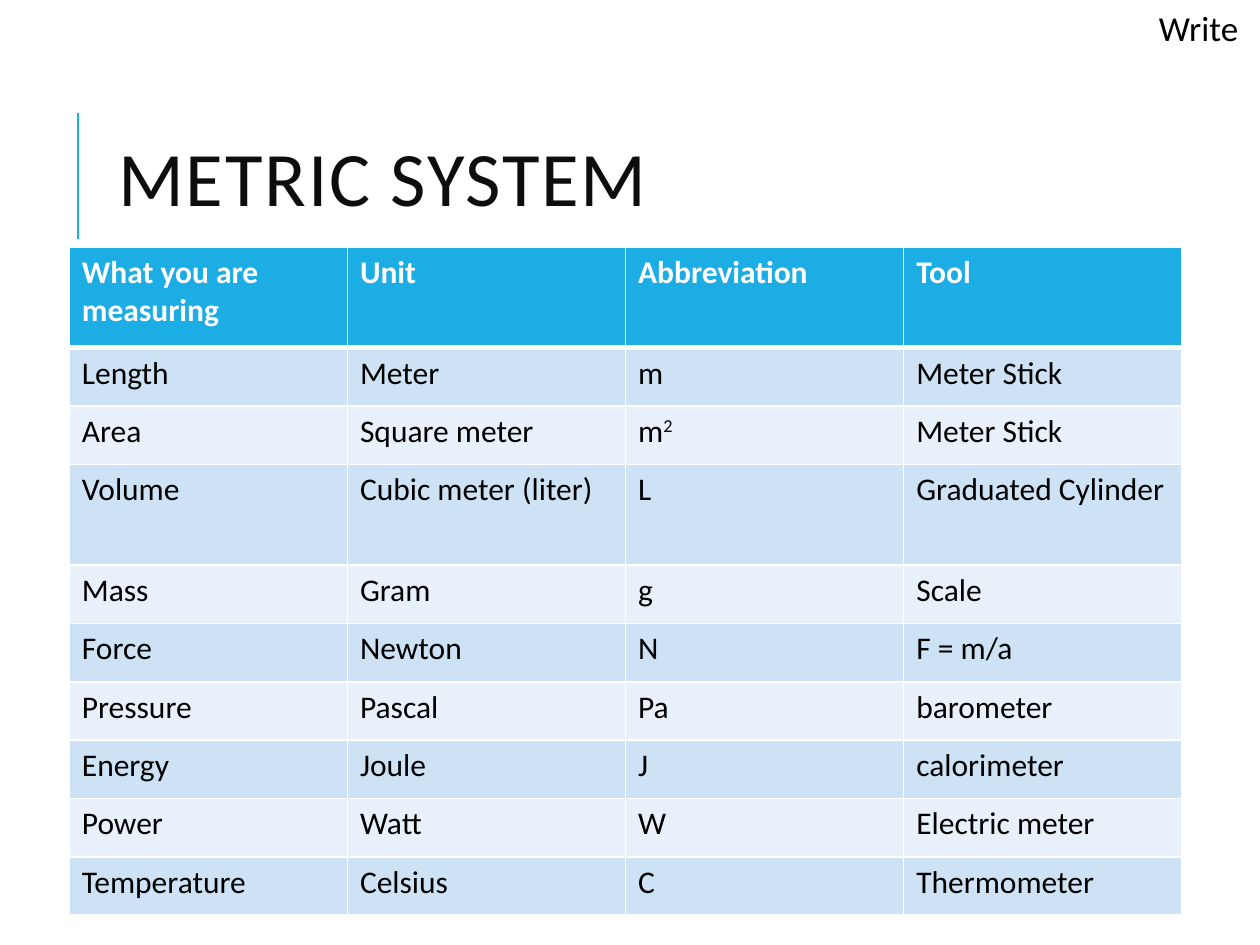
import pptx
import pptx.util
import pptx.dml.color
import pptx.enum.shapes
import pptx.enum.text
import lxml.etree

Inches = pptx.util.Inches
Pt = pptx.util.Pt
RGB = pptx.dml.color.RGBColor.from_string

theme = {
    "font": "Calibri",
    "accent": "1CADE4", "bands": ("CDE3F5", "E8F1FA"),
    "title": "0D0D0D", "text": "000000", "rule": "FFFFFF",
    "title size": 44, "cell size": 18, "note size": 20,
}


def style(run, size, color, bold=False):
    look = {"name": theme["font"], "size": Pt(size), "bold": bold}
    for key, value in look.items():
        setattr(run.font, key, value)
    run.font.color.rgb = RGB(color)


def add_tag(parent, tag, **attrs):
    """Append a DrawingML element and return it."""
    name = pptx.oxml.ns.qn("a:" + tag)
    return lxml.etree.SubElement(parent, name, **attrs)


deck = pptx.Presentation()
deck.slide_width, deck.slide_height = Inches(10), Inches(7.5)
slide = deck.slides.add_slide(deck.slide_layouts[5])

# Accent line beside the title
line = slide.shapes.add_connector(
    pptx.enum.shapes.MSO_CONNECTOR.STRAIGHT,
    Inches(0.62), Inches(1.9), Inches(0.62), Inches(0.9))
line.line.color.rgb = RGB(theme["accent"])
line.line.width = Pt(1.5)
add_tag(line._element.spPr, "effectLst")

# Title
title = slide.shapes.title
place = {"left": 0.84, "top": 0.64, "width": 7.97, "height": 1.64}
for key, value in place.items():
    setattr(title, key, Inches(value))
frame = title.text_frame
frame.vertical_anchor = pptx.enum.text.MSO_ANCHOR.MIDDLE
para = frame.paragraphs[0]
para.alignment = pptx.enum.text.PP_ALIGN.LEFT
para.line_spacing = 0.8
run = para.add_run()
run.text = "METRIC SYSTEM"
style(run, theme["title size"], theme["title"])
run.font._element.set("spc", "100")

# Table of units; a caret marks a superscript
rows = [
    ("What you are measuring", "Unit", "Abbreviation", "Tool"),
    ("Length", "Meter", "m", "Meter Stick"),
    ("Area", "Square meter", "m^2", "Meter Stick"),
    ("Volume", "Cubic meter (liter)", "L", "Graduated Cylinder"),
    ("Mass", "Gram", "g", "Scale"),
    ("Force", "Newton", "N", "F = m/a"),
    ("Pressure", "Pascal", "Pa", "barometer"),
    ("Energy", "Joule", "J", "calorimeter"),
    ("Power", "Watt", "W", "Electric meter"),
    ("Temperature", "Celsius", "C", "Thermometer"),
]
tall = (0, 3)
grid = slide.shapes.add_table(
    len(rows), len(rows[0]),
    Inches(0.55), Inches(1.96), Inches(8.83), Inches(5.29)).table

for r, texts in enumerate(rows):
    head = r == 0
    grid.rows[r].height = Inches(0.8 if r in tall else 0.463)
    fill = theme["accent"] if head else theme["bands"][(r - 1) % 2]
    color = theme["rule"] if head else theme["text"]
    for c, text in enumerate(texts):
        cell = grid.cell(r, c)
        para = cell.text_frame.paragraphs[0]
        for n, part in enumerate(text.split("^")):
            run = para.add_run()
            run.text = part
            style(run, theme["cell size"], color, head)
            if n:
                run.font._element.set("baseline", "30000")
        props = cell._tc.get_or_add_tcPr()
        for side in "LRTB":
            thick = (head and side == "B") or (r == 1 and side == "T")
            edge = add_tag(props, "ln" + side, w=str(Pt(3 if thick else 1)))
            add_tag(add_tag(edge, "solidFill"), "srgbClr", val=theme["rule"])
        cell.fill.solid()
        cell.fill.fore_color.rgb = RGB(fill)

# Corner note
note = slide.shapes.add_textbox(
    Inches(9.1), Inches(0), Inches(1.16), Inches(0.44))
note.text_frame.word_wrap = True
note.text_frame.auto_size = pptx.enum.text.MSO_AUTO_SIZE.SHAPE_TO_FIT_TEXT
run = note.text_frame.paragraphs[0].add_run()
run.text = "Write"
style(run, theme["note size"], theme["text"])

deck.save("out.pptx")
